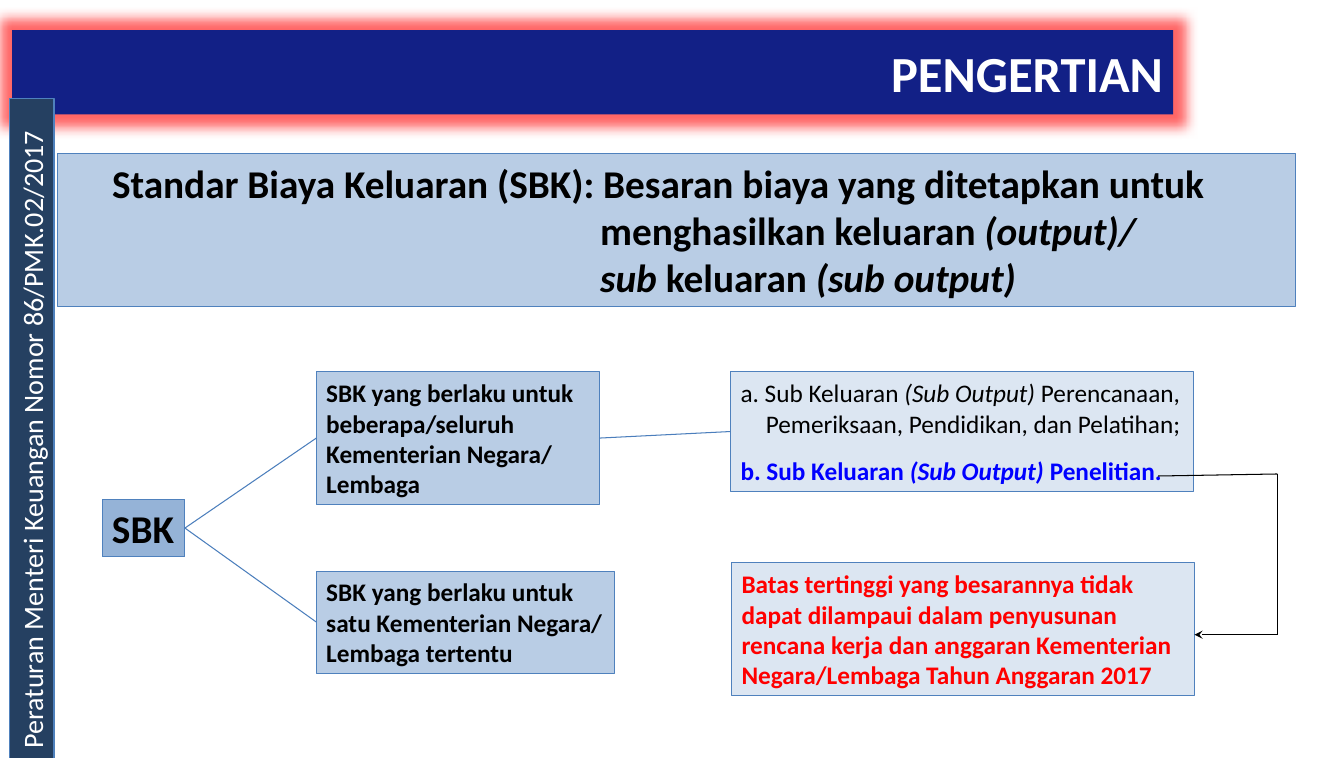
"""Builds the slide that defines Standar Biaya Keluaran (SBK)."""
from dataclasses import dataclass
from itertools import pairwise

from lxml import etree
from pptx import Presentation
from pptx.dml.color import RGBColor
from pptx.enum.shapes import MSO_CONNECTOR, MSO_SHAPE
from pptx.enum.text import MSO_ANCHOR, MSO_AUTO_SIZE, PP_ALIGN
from pptx.oxml.ns import qn
from pptx.shapes.autoshape import Shape
from pptx.shapes.connector import Connector
from pptx.slide import Slide
from pptx.util import Emu, Inches, Pt

RECTANGLE = MSO_SHAPE.RECTANGLE
STRAIGHT = MSO_CONNECTOR.STRAIGHT
MIDDLE = MSO_ANCHOR.MIDDLE
GROW = MSO_AUTO_SIZE.SHAPE_TO_FIT_TEXT
LEFT, RIGHT = PP_ALIGN.LEFT, PP_ALIGN.RIGHT
LEFT_SITE, RIGHT_SITE = 1, 3
COLUMNS, ROWS = 133, 75
CELL = Inches(0.1)
TITLE_ONLY = 5


@dataclass(frozen=True)
class Theme:
    font: str = "Calibri"
    title_size: int = 36
    heading_size: int = 28
    side_size: int = 20
    body_size: int = 18
    line_width: float = 0.75
    navy: str = "122086"
    glow: str = "FF0000"
    slate: str = "254061"
    deep_blue: str = "95B3D7"
    mid_blue: str = "B9CDE5"
    pale_blue: str = "DCE6F2"
    border: str = "4F81BD"
    branch: str = "4B7EBC"
    black: str = "000000"
    white: str = "FFFFFF"
    blue: str = "0000FF"
    red: str = "FF0000"


THEME = Theme()


@dataclass(frozen=True)
class Area:
    column: float
    row: float
    columns: float
    rows: float


@dataclass(frozen=True)
class Phrase:
    text: str
    italic: bool = False


@dataclass(frozen=True)
class Line:
    phrases: tuple[Phrase, ...]
    color: str = THEME.black
    bold: bool = True
    margin: float = 0
    hanging: float = 0
    space_after: float = 0


@dataclass(frozen=True)
class Panel:
    area: Area
    fill: str
    size: int
    lines: tuple[Line, ...]
    rotation: float = 0


def plain(text: str, color: str = THEME.black, bold: bool = True) -> tuple[Line, ...]:
    """Return one line made of a single upright phrase."""
    return (Line((Phrase(text),), color, bold),)


SUB_OUTPUT = Phrase("(Sub Output) ", True)

DEFINITION = Panel(Area(5.7, 15.2, 122.5, 15.1), THEME.mid_blue, THEME.heading_size, (
    Line((Phrase("Standar Biaya Keluaran (SBK): Besaran biaya yang ditetapkan untuk"),), margin=4.4),
    Line((Phrase("menghasilkan keluaran "), Phrase("(output)/", True)), margin=52.7),
    Line((Phrase("sub ", True), Phrase("keluaran "), Phrase("(sub output)", True)), margin=52.7),
))
SBK = Panel(Area(10.1, 49.4, 8.2, 5.7), THEME.deep_blue, THEME.heading_size, plain("SBK"))
GENERAL = Panel(Area(31.3, 36.8, 28, 13.1), THEME.mid_blue, THEME.body_size,
                plain("SBK yang berlaku untuk beberapa/seluruh Kementerian Negara/ Lembaga"))
SPECIFIC = Panel(Area(31.3, 56.5, 29.5, 10.1), THEME.mid_blue, THEME.body_size,
                 plain("SBK yang berlaku untuk satu Kementerian Negara/ Lembaga tertentu"))
SUB_OUTPUTS = Panel(Area(72.3, 36.8, 45.8, 11.8), THEME.pale_blue, THEME.body_size, (
    Line((Phrase("a. Sub Keluaran "), SUB_OUTPUT,
          Phrase("Perencanaan, Pemeriksaan, Pendidikan, dan Pelatihan;")),
         bold=False, margin=2.5, hanging=2.5, space_after=12),
    Line((Phrase("b. Sub Keluaran "), SUB_OUTPUT, Phrase("Penelitian.")),
         THEME.blue, margin=2.5, hanging=2.5),
))
CEILING = Panel(Area(72.4, 55.7, 45.8, 13.1), THEME.pale_blue, THEME.body_size, plain(
    "Batas tertinggi yang besarannya tidak dapat dilampaui dalam penyusunan "
    "rencana kerja dan anggaran Kementerian Negara/Lembaga Tahun Anggaran 2017", THEME.red))
REGULATION = Panel(Area(-29.5, 40.2, 65.3, 4.4), THEME.slate, THEME.side_size,
                   plain("Peraturan Menteri Keuangan Nomor 86/PMK.02/2017", THEME.white, False), 270)

PANELS = (DEFINITION, SBK, GENERAL, SPECIFIC, SUB_OUTPUTS, CEILING, REGULATION)
BRANCHES = ((SBK, GENERAL), (SBK, SPECIFIC), (GENERAL, SUB_OUTPUTS))
CEILING_ROUTE = ((114.6, 47.1), (126.4, 46.9), (126.4, 62.8), (118.2, 62.8))


def cells(count: float) -> Emu:
    """Convert a count of grid cells to a length."""
    return Emu(round(count * CELL))


def place(shape: Shape, area: Area) -> None:
    """Move and size a shape on the grid."""
    shape.left, shape.top = cells(area.column), cells(area.row)
    shape.width, shape.height = cells(area.columns), cells(area.rows)


def fill_solid(shape: Shape, color: str) -> None:
    """Give a shape one plain fill colour."""
    shape.fill.solid()
    shape.fill.fore_color.rgb = RGBColor.from_string(color)


def write_lines(shape: Shape, lines: tuple[Line, ...], size: int, align: PP_ALIGN = LEFT) -> None:
    """Write formatted lines into a shape."""
    frame = shape.text_frame
    frame.word_wrap, frame.auto_size, frame.vertical_anchor = True, GROW, MIDDLE
    for index, line in enumerate(lines):
        paragraph = frame.add_paragraph() if index else frame.paragraphs[0]
        paragraph.alignment = align
        paragraph.space_after = Pt(line.space_after)
        properties = paragraph._p.get_or_add_pPr()
        properties.set("marL", str(cells(line.margin)))
        properties.set("indent", str(cells(-line.hanging)))
        for phrase in line.phrases:
            run = paragraph.add_run()
            run.text = phrase.text
            run.font.name, run.font.size = THEME.font, Pt(size)
            run.font.bold, run.font.italic = line.bold, phrase.italic
            run.font.color.rgb = RGBColor.from_string(line.color)


def draw_title(slide: Slide) -> None:
    """Format the title as a navy bar with a red glow."""
    title = slide.shapes.title
    place(title, Area(1.2, 3.6, 114.9, 7.1))
    fill_solid(title, THEME.navy)
    title.line.fill.background()
    effects = etree.SubElement(title.element.spPr, qn("a:effectLst"))
    glow = etree.SubElement(effects, qn("a:glow"), rad=str(cells(2.5)))
    color = etree.SubElement(glow, qn("a:srgbClr"), val=THEME.glow)
    etree.SubElement(color, qn("a:alpha"), val="60000")
    write_lines(title, plain("PENGERTIAN", THEME.white), THEME.title_size, RIGHT)


def draw_panel(slide: Slide, panel: Panel) -> Shape:
    """Draw a bordered panel with its text."""
    box = slide.shapes.add_shape(RECTANGLE, 0, 0, CELL, CELL)
    place(box, panel.area)
    box.rotation = panel.rotation
    box.shadow.inherit = False
    fill_solid(box, panel.fill)
    box.line.color.rgb = RGBColor.from_string(THEME.border)
    box.line.width = Pt(THEME.line_width)
    write_lines(box, panel.lines, panel.size)
    return box


def draw_link(slide: Slide, start: tuple[float, float], end: tuple[float, float], color: str) -> Connector:
    """Draw a thin straight line between two grid points."""
    link = slide.shapes.add_connector(STRAIGHT, *map(cells, start + end))
    link.line.color.rgb = RGBColor.from_string(color)
    link.line.width = Pt(THEME.line_width)
    etree.SubElement(link.element.spPr, qn("a:effectLst"))
    return link


def main() -> None:
    """Build and save the slide."""
    deck = Presentation()
    deck.slide_width, deck.slide_height = cells(COLUMNS), cells(ROWS)
    slide = deck.slides.add_slide(deck.slide_layouts[TITLE_ONLY])
    draw_title(slide)
    boxes = {panel: draw_panel(slide, panel) for panel in PANELS}
    for source, target in BRANCHES:
        branch = draw_link(slide, (0, 0), (1, 1), THEME.branch)
        branch.begin_connect(boxes[source], RIGHT_SITE)
        branch.end_connect(boxes[target], LEFT_SITE)
    route = [draw_link(slide, start, end, THEME.black) for start, end in pairwise(CEILING_ROUTE)]
    etree.SubElement(route[-1].element.spPr.find(qn("a:ln")), qn("a:tailEnd"), type="stealth")
    deck.save("out.pptx")


if __name__ == "__main__":
    main()
